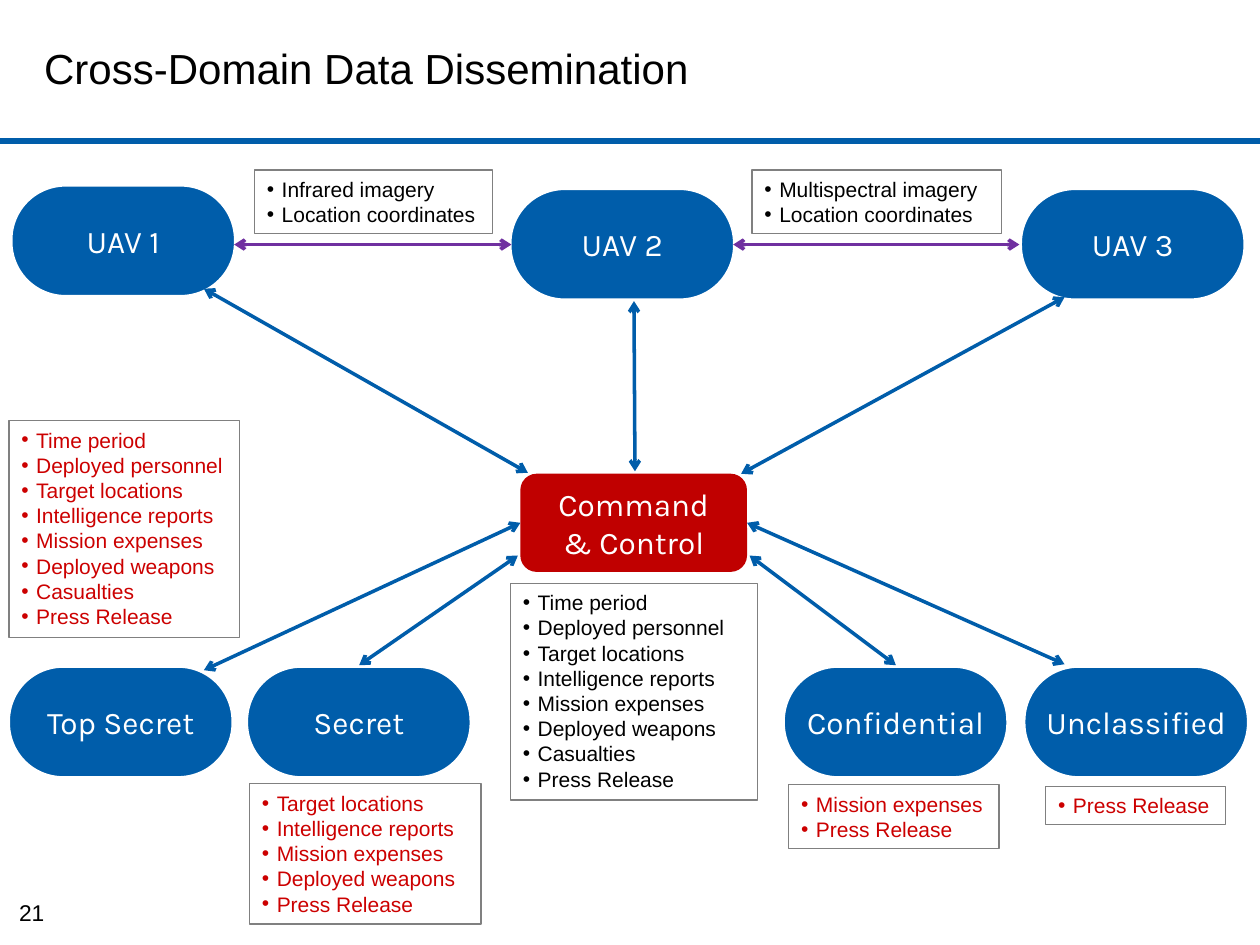
from lxml import etree
from pptx import Presentation
from pptx import util as u
from pptx.dml.color import RGBColor
from pptx.enum import shapes, text
from pptx.oxml import ns

COLORS = {
    "blue": "005DAA", "red": "C00000", "release": "CC0000", "purple": "7030A0",
    "gray": "808080", "white": "FFFFFF", "black": "000000",
}
RECORDS = [
    "Time period", "Deployed personnel", "Target locations", "Intelligence reports",
    "Mission expenses", "Deployed weapons", "Casualties", "Press Release",
]
PILL_WIDTH, PILL_HEIGHT = 4.57, 2.29
LEVEL_TOP = 13.41


def color(name):
    return RGBColor.from_string(COLORS[name])


def write(frame, lines, size=12, font="Arial", fill="black", align=None,
          anchor=text.MSO_ANCHOR.TOP, insets=(0.25, 0.13), wrap=True, bullet=False):
    frame.word_wrap = wrap
    frame.vertical_anchor = anchor
    frame.margin_left = frame.margin_right = u.Cm(insets[0])
    frame.margin_top = frame.margin_bottom = u.Cm(insets[1])
    for index, line in enumerate(lines):
        para = frame.add_paragraph() if index else frame.paragraphs[0]
        para.alignment = align or text.PP_ALIGN.LEFT
        if bullet:
            properties = para._p.get_or_add_pPr()
            properties.set("marL", str(u.Cm(0.3)))
            properties.set("indent", str(-u.Cm(0.3)))
            face = etree.SubElement(properties, ns.qn("a:buFont"))
            face.set("typeface", font)
            etree.SubElement(properties, ns.qn("a:buChar")).set("char", "•")
        span = para.add_run()
        span.text = line
        span.font.size = u.Pt(size)
        span.font.name = font
        span.font.color.rgb = color(fill)


class Diagram:
    def __init__(self, deck):
        self.page = deck.slides.add_slide(deck.slide_layouts[5])
        self.center = dict(align=text.PP_ALIGN.CENTER, anchor=text.MSO_ANCHOR.MIDDLE)
        self.node_text = dict(self.center, size=18, font="Karla", fill="white")

    def title(self, words, *place):
        box = self.page.shapes.title
        box.left, box.top, box.width, box.height = map(u.Cm, place)
        write(box.text_frame, [words], size=24, anchor=text.MSO_ANCHOR.MIDDLE)

    def shape(self, kind, place, fill=None, line=None, weight=1):
        box = self.page.shapes.add_shape(kind, *map(u.Cm, place))
        box.shadow.inherit = False
        if fill:
            box.fill.solid()
            box.fill.fore_color.rgb = color(fill)
        else:
            box.fill.background()
        if line:
            box.line.color.rgb = color(line)
            box.line.width = u.Pt(weight)
        else:
            box.line.fill.background()
        return box

    def pill(self, label, left, top):
        box = self.shape(shapes.MSO_SHAPE.ROUNDED_RECTANGLE,
                         (left, top, PILL_WIDTH, PILL_HEIGHT), "blue", "white", 3)
        box.adjustments[0] = 0.49
        write(box.text_frame, [label], insets=(0.05, 0.05), **self.node_text)

    def hub(self, lines, *place):
        box = self.shape(shapes.MSO_SHAPE.ROUNDED_RECTANGLE, place, "red")
        write(box.text_frame, lines, insets=(0.13, 0.13), **self.node_text)

    def bullets(self, lines, left, top, width, fill="release"):
        height = 0.25 + 0.515 * len(lines)
        box = self.shape(shapes.MSO_SHAPE.RECTANGLE, (left, top, width, height),
                         line="gray", weight=0.75)
        write(box.text_frame, lines, fill=fill, bullet=True)

    def line(self, *ends, stroke="blue", weight=2, arrows=True):
        link = self.page.shapes.add_connector(
            shapes.MSO_CONNECTOR.STRAIGHT, *map(u.Cm, ends))
        link.line.color.rgb = color(stroke)
        link.line.width = u.Pt(weight)
        etree.SubElement(link._element.spPr, ns.qn("a:effectLst"))
        if arrows:
            for end in ("a:headEnd", "a:tailEnd"):
                etree.SubElement(link.line._get_or_add_ln(), ns.qn(end)).set("type", "arrow")

    def number(self, value, *place):
        box = self.page.shapes.add_textbox(*map(u.Cm, place))
        write(box.text_frame, [value], size=13, align=text.PP_ALIGN.CENTER,
              insets=(0.28, 0.13), wrap=False)


def main():
    deck = Presentation()
    deck.slide_width, deck.slide_height = u.Cm(25.4), u.Cm(19.05)
    diagram = Diagram(deck)
    diagram.title("Cross-Domain Data Dissemination", 0.64, 0.2, 18.62, 2.34)
    diagram.line(0, 2.84, 25.4, 2.84, weight=3.75, arrows=False)

    for label, left, top in [("UAV 1", 0.2, 3.71), ("UAV 2", 10.26, 3.78),
                             ("UAV 3", 20.55, 3.78)]:
        diagram.pill(label, left, top)
    for label, left in [("Top Secret", 0.15), ("Secret", 4.95),
                        ("Confidential", 15.77), ("Unclassified", 20.62)]:
        diagram.pill(label, left, LEVEL_TOP)
    diagram.hub(["Command", "& Control"], 10.49, 9.55, 4.57, 1.98)

    for start, end in [(4.72, 10.31), (14.78, 20.55)]:
        diagram.line(start, 4.93, end, 4.93, stroke="purple")
    for ends in [
        (10.64, 9.53, 4.11, 5.82),
        (12.8, 9.5, 12.78, 6.07),
        (14.94, 9.55, 21.46, 5.99),
        (4.11, 13.51, 10.49, 10.54),
        (7.24, LEVEL_TOP, 10.44, 11.2),
        (18.06, LEVEL_TOP, 15.11, 11.2),
        (21.46, 13.39, 15.06, 10.54),
    ]:
        diagram.line(*ends)

    for imagery, left, width in [("Infrared", 5.13, 4.8), ("Multispectral", 15.16, 5.03)]:
        diagram.bullets([f"{imagery} imagery", "Location coordinates"],
                        left, 3.43, width, fill="black")
    diagram.bullets(RECORDS, 10.29, 11.76, 4.98, fill="black")
    diagram.bullets(RECORDS, 0.18, 8.48, 4.65)
    diagram.bullets(RECORDS[2:6] + RECORDS[-1:], 5.03, 15.8, 4.67)
    diagram.bullets(["Mission expenses", "Press Release"], 15.9, 15.82, 4.24)
    diagram.bullets(["Press Release"], 21.08, 15.85, 3.63)
    diagram.number("21", 0.08, 17.98, 1.12, 0.84)
    deck.save("out.pptx")


if __name__ == "__main__":
    main()
